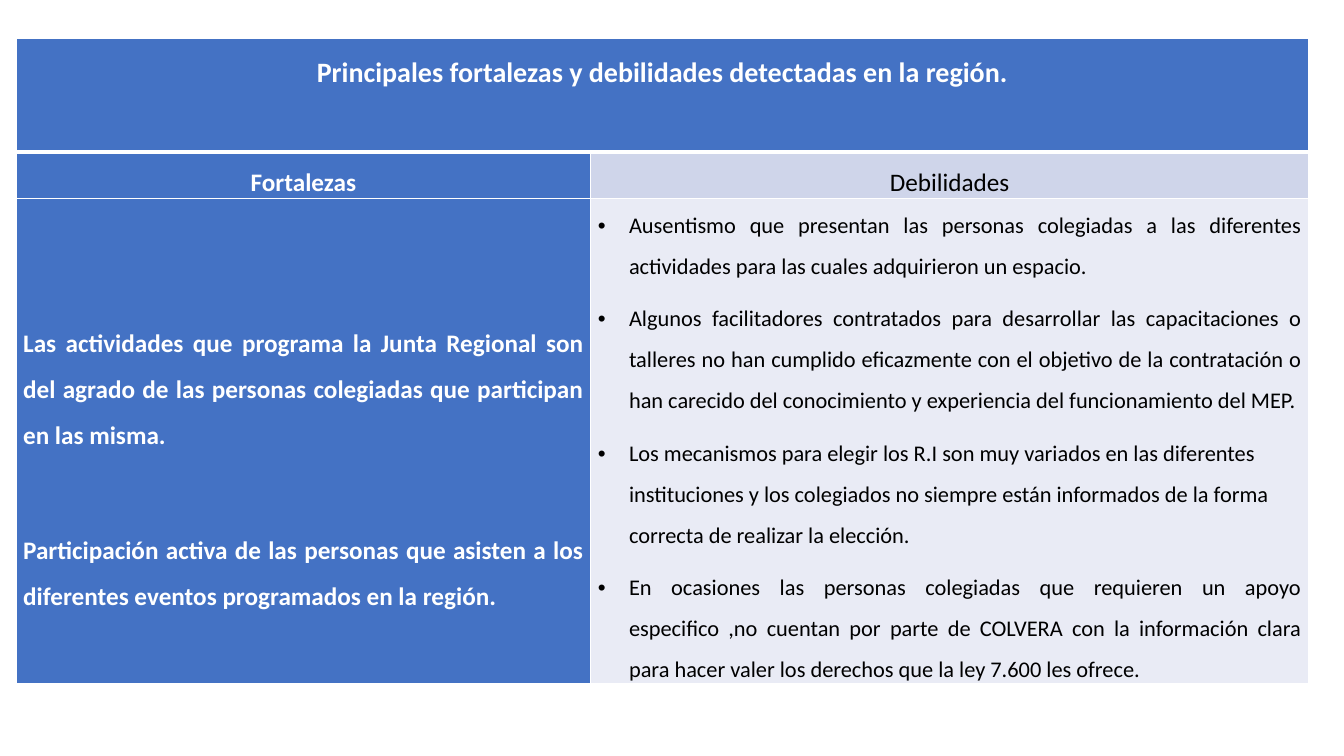
import lxml.etree
import pptx
import pptx.dml.color
import pptx.enum.text
import pptx.oxml.ns
import pptx.util

SLIDE_WIDTH = pptx.util.Inches(13.33)
SLIDE_HEIGHT = pptx.util.Inches(7.5)
FONT = "Calibri"
BLUE, LAVENDER, PALE = "4472C4", "CFD5EA", "E9EBF5"
WHITE, BLACK = "FFFFFF", "000000"
CENTER = pptx.enum.text.PP_ALIGN.CENTER
JUSTIFY = pptx.enum.text.PP_ALIGN.JUSTIFY
LEFT = pptx.enum.text.PP_ALIGN.LEFT

COLUMN_SHARES = [42.76, 53.41]
ROW_SHARES = [15.07, 5.6, 63.87]

TITLE = "Principales fortalezas y debilidades detectadas en la región."
STRENGTHS = [
    ("Las actividades que programa la Junta Regional son del agrado de las personas "
     "colegiadas que participan en las misma.", JUSTIFY),
    ("Participación activa de las personas que asisten a los diferentes eventos "
     "programados en la región.", JUSTIFY),
]
WEAKNESSES = [
    ("Ausentismo que presentan las personas colegiadas a las diferentes actividades "
     "para las cuales adquirieron un espacio.", JUSTIFY),
    ("Algunos facilitadores contratados para desarrollar las capacitaciones o talleres "
     "no han cumplido eficazmente con el objetivo de la contratación o han carecido del "
     "conocimiento y experiencia del funcionamiento del MEP.", JUSTIFY),
    ("Los mecanismos para elegir los R.I son muy variados en las diferentes "
     "instituciones y los colegiados no siempre están informados de la forma correcta "
     "de realizar la elección.", LEFT),
    ("En ocasiones las personas colegiadas que requieren un apoyo especifico ,no cuentan "
     "por parte de COLVERA con la información clara para hacer valer los derechos que la "
     "ley 7.600 les ofrece.", JUSTIFY),
]


def color(value):
    return pptx.dml.color.RGBColor.from_string(value)


def across(share):
    return round(SLIDE_WIDTH * share / 100)


def down(share):
    return round(SLIDE_HEIGHT * share / 100)


def add_child(parent, tag, **attributes):
    return lxml.etree.SubElement(parent, pptx.oxml.ns.qn(tag), **attributes)


def draw_borders(cell, top=1, bottom=1):
    properties = cell._tc.get_or_add_tcPr()
    for side, points in (("L", 1), ("R", 1), ("T", top), ("B", bottom)):
        line = add_child(properties, f"a:ln{side}", w=str(pptx.util.Pt(points)))
        add_child(add_child(line, "a:solidFill"), "a:srgbClr", val=WHITE)


def fill_cell(cell, background, top_margin=0):
    cell.margin_left = cell.margin_right = pptx.util.Inches(0.07)
    cell.margin_top = down(top_margin)
    cell.margin_bottom = 0
    cell.vertical_anchor = pptx.enum.text.MSO_ANCHOR.TOP
    cell.fill.solid()
    cell.fill.fore_color.rgb = color(background)


def add_bullet(paragraph):
    properties = paragraph._p.get_or_add_pPr()
    indent = pptx.util.Inches(0.31)
    properties.set("marL", str(indent))
    properties.set("indent", str(-indent))
    add_child(properties, "a:buFont", typeface="Arial")
    add_child(properties, "a:buChar", char="•")


def write_cell(cell, texts, size, text_color, bold=False, bulleted=False, gap=8):
    frame = cell.text_frame
    for index, (text, alignment) in enumerate(texts):
        paragraph = frame.add_paragraph() if index else frame.paragraphs[0]
        if bulleted:
            add_bullet(paragraph)
        paragraph.alignment = alignment
        paragraph.line_spacing = 1.5
        paragraph.space_after = pptx.util.Pt(gap if index < len(texts) - 1 else 8)
        run = paragraph.add_run()
        run.text = text
        run.font.name = FONT
        run.font.size = pptx.util.Pt(size)
        run.font.bold = bold
        run.font.color.rgb = color(text_color)


def add_grid_table(slide):
    frame = slide.shapes.add_table(
        len(ROW_SHARES), len(COLUMN_SHARES), across(1.2), down(5.07),
        across(sum(COLUMN_SHARES)), down(sum(ROW_SHARES)))
    table = frame.table
    table.first_row = table.horz_banding = False
    for column, share in zip(table.columns, COLUMN_SHARES):
        column.width = across(share)
    for row, share in zip(table.rows, ROW_SHARES):
        row.height = down(share)
    for index, row in enumerate(table.rows):
        for cell in row.cells:
            draw_borders(cell, top=3 if index == 1 else 1, bottom=3 if index == 0 else 1)
    table.cell(0, 0).merge(table.cell(0, 1))
    return table


def main():
    presentation = pptx.Presentation()
    presentation.slide_width = SLIDE_WIDTH
    presentation.slide_height = SLIDE_HEIGHT
    slide = presentation.slides.add_slide(presentation.slide_layouts[6])
    table = add_grid_table(slide)

    title = table.cell(0, 0)
    fill_cell(title, BLUE)
    write_cell(title, [(TITLE, CENTER)], 20, WHITE, bold=True)

    strengths_heading, weaknesses_heading = table.cell(1, 0), table.cell(1, 1)
    fill_cell(strengths_heading, BLUE)
    write_cell(strengths_heading, [("Fortalezas", CENTER)], 18, WHITE, bold=True)
    fill_cell(weaknesses_heading, LAVENDER)
    write_cell(weaknesses_heading, [("Debilidades", CENTER)], 18, BLACK)

    strengths, weaknesses = table.cell(2, 0), table.cell(2, 1)
    fill_cell(strengths, BLUE, top_margin=15.2)
    write_cell(strengths, STRENGTHS, 18, WHITE, bold=True, gap=49)
    fill_cell(weaknesses, PALE)
    write_cell(weaknesses, WEAKNESSES, 16, BLACK, bulleted=True)

    presentation.save("out.pptx")


if __name__ == "__main__":
    main()
